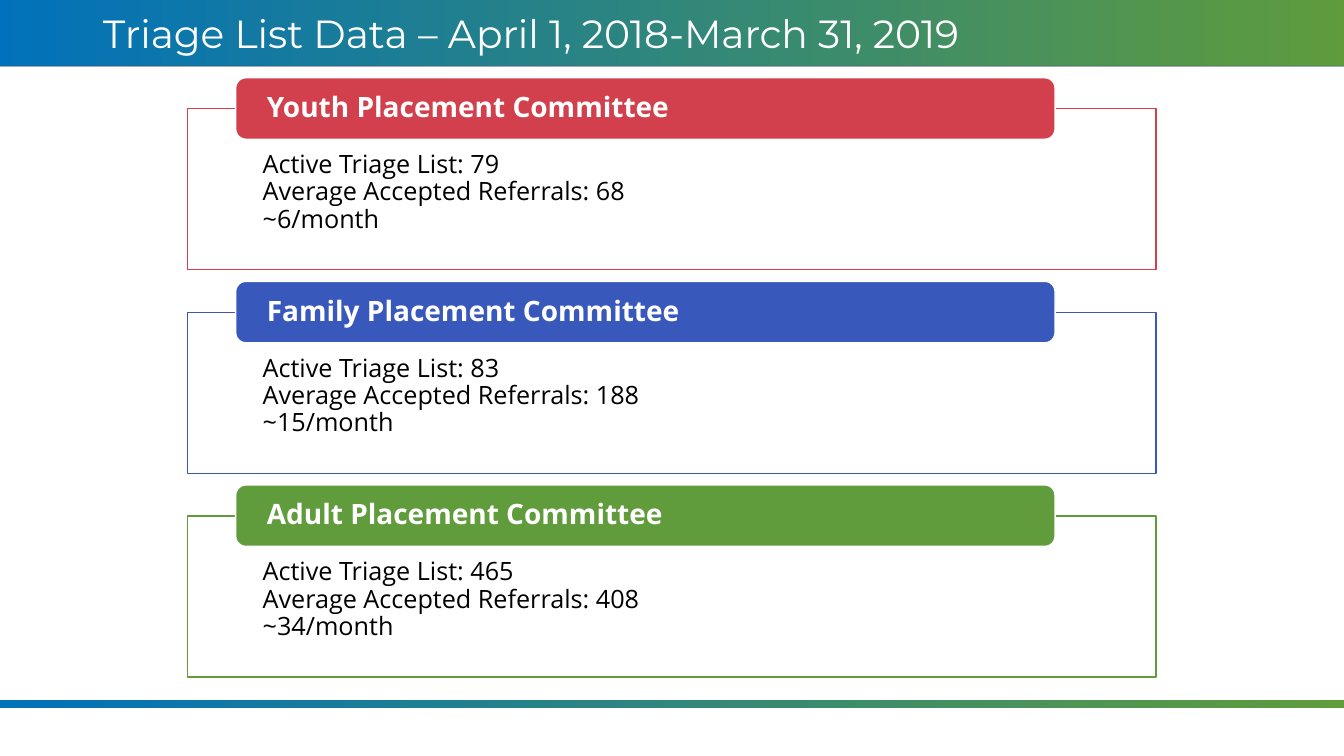
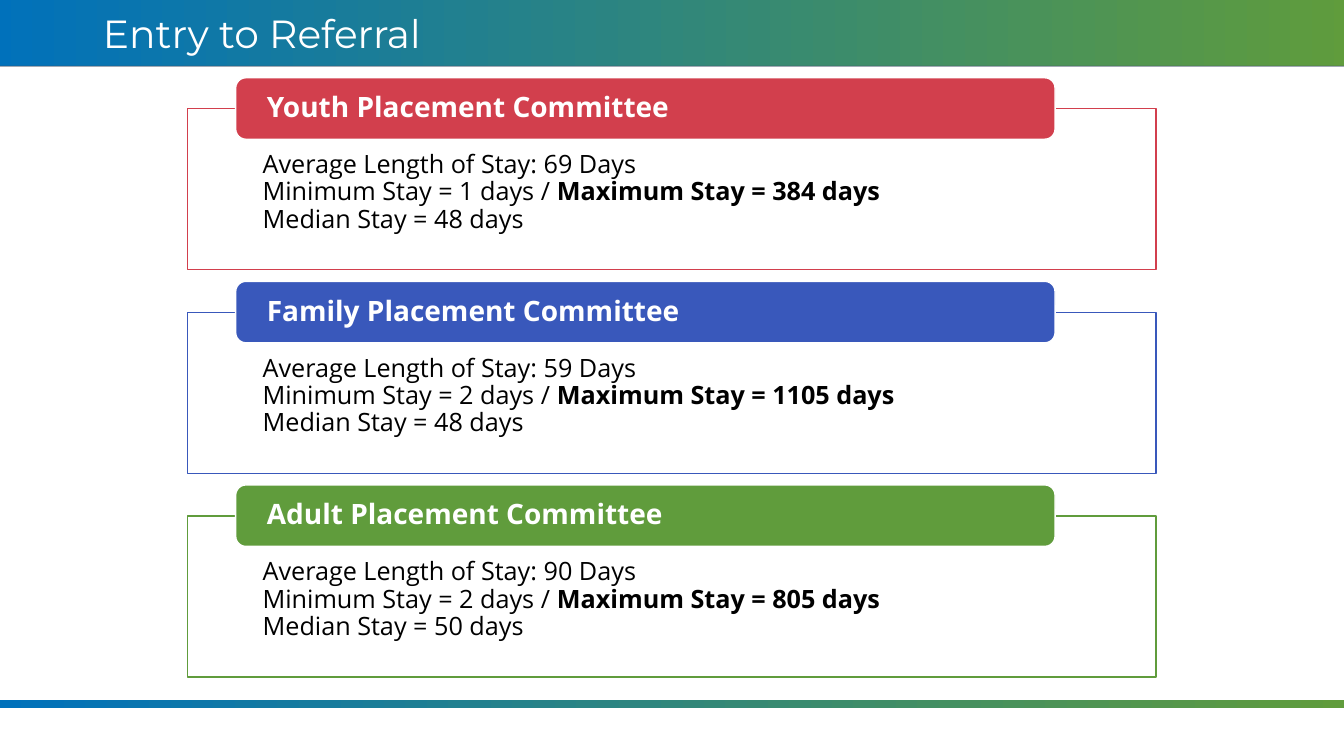
from lxml import etree
from pptx import Presentation, util as u
from pptx.dml.color import RGBColor
from pptx.enum import shapes, text
from pptx.oxml.ns import qn

HUES = {"blue": "0071BB", "green": "609C3C", "red": "D23F4D", "royal": "3958BB",
        "slate": "44546A", "white": "FFFFFF", "black": "000000"}
TEAMS = [("Youth Placement Committee", "red"),
         ("Family Placement Committee", "royal"),
         ("Adult Placement Committee", "green")]
TRIAGE = [(79, 68, 6), (83, 188, 15), (465, 408, 34)]
STAYS = [(69, 1, 384, 48), (59, 2, 1105, 48), (90, 2, 805, 50)]
SLIDES = [
    ("Triage List Data – April 1, 2018-March 31, 2019",
     [[[(f"Active Triage List: {active}", False)],
       [(f"Average Accepted Referrals: {taken}", False)],
       [(f"~{rate}/month", False)]] for active, taken, rate in TRIAGE]),
    ("Entry to Referral",
     [[[(f"Average Length of Stay: {mean} Days", False)],
       [(f"Minimum Stay = {low} days / ", False), (f"Maximum Stay = {high} days", True)],
       [(f"Median Stay = {mid} days", False)]] for mean, low, high, mid in STAYS]),
]
BANDS = [((-0.28, -0.18, 34.44, 1.85), "slate"), ((0, 17.65, 33.87, 0.18), None)]
TITLE = (2.34, 0.13, 29.21, 1.52)
CARD = (4.72, 2.74, 24.41, 4.06)
TAG = (5.94, 1.96, 20.65, 1.55)
PITCH = 5.13


def hue(name):
    return RGBColor.from_string(HUES[name])


def add_box(slide, kind, place, line=None):
    box = slide.shapes.add_shape(kind, *map(u.Cm, place))
    box.shadow.inherit = False
    if line:
        box.line.color.rgb = hue(line)
        box.line.width = u.Pt(1)
    else:
        box.line.fill.background()
    return box


def write(frame, lines, size, font, color, pads=None):
    frame.word_wrap = True
    if pads:
        (frame.margin_left, frame.margin_top,
         frame.margin_right, frame.margin_bottom) = map(u.Cm, pads)
    for i, runs in enumerate(lines):
        para = frame.add_paragraph() if i else frame.paragraphs[0]
        para.alignment = text.PP_ALIGN.LEFT
        para.line_spacing = 0.9
        for words, bold in runs:
            run = para.add_run()
            run.text = words
            run.font.size = u.Pt(size)
            run.font.name = font
            run.font.bold = bold
            run.font.color.rgb = hue(color)


def add_bands(slide, layout):
    for i, (place, line) in enumerate(BANDS):
        band = add_box(slide, shapes.MSO_SHAPE.RECTANGLE, place, line)
        band.fill.gradient()
        band.fill.gradient_angle = 0
        for stop, name in zip(band.fill.gradient_stops, ("blue", "green")):
            stop.color.rgb = hue(name)
        if line:
            tint = band.line._get_or_add_ln().find(".//" + qn("a:srgbClr"))
            etree.SubElement(tint, qn("a:alpha")).set("val", "50000")
        layout.shapes.element.insert(2 + i, band.element)


def add_card(slide, row, team, lines):
    name, color = team
    drop = row * PITCH
    left, top, wide, high = CARD
    card = add_box(slide, shapes.MSO_SHAPE.RECTANGLE, (left, top + drop, wide, high), color)
    card.fill.solid()
    card.fill.fore_color.rgb = hue("white")
    card.text_frame.vertical_anchor = text.MSO_ANCHOR.TOP
    write(card.text_frame, lines, 18, "Open Sans", "black", (1.9, 1.09, 1.9, 0.36))
    left, top, wide, high = TAG
    tag = add_box(slide, shapes.MSO_SHAPE.ROUNDED_RECTANGLE,
                  (left, top + drop, wide, high), "white")
    tag.fill.solid()
    tag.fill.fore_color.rgb = hue(color)
    tag.text_frame.vertical_anchor = text.MSO_ANCHOR.MIDDLE
    write(tag.text_frame, [[(name, True)]], 20, "Open Sans", "white", (0.71, 0, 0.71, 0))


def main():
    deck = Presentation()
    deck.slide_width, deck.slide_height = u.Cm(33.87), u.Cm(19.05)
    layout = deck.slide_layouts[5]
    head = layout.placeholders[0]
    head.left, head.top, head.width, head.height = map(u.Cm, TITLE)
    for page, (title, cards) in enumerate(SLIDES):
        slide = deck.slides.add_slide(layout)
        if page == 0:
            add_bands(slide, layout)
        frame = slide.shapes.title.text_frame
        frame.vertical_anchor = text.MSO_ANCHOR.MIDDLE
        write(frame, [[(title, False)]], 28, "Montserrat", "white")
        for row, (team, lines) in enumerate(zip(TEAMS, cards)):
            add_card(slide, row, team, lines)
    deck.save("out.pptx")


if __name__ == "__main__":
    main()
